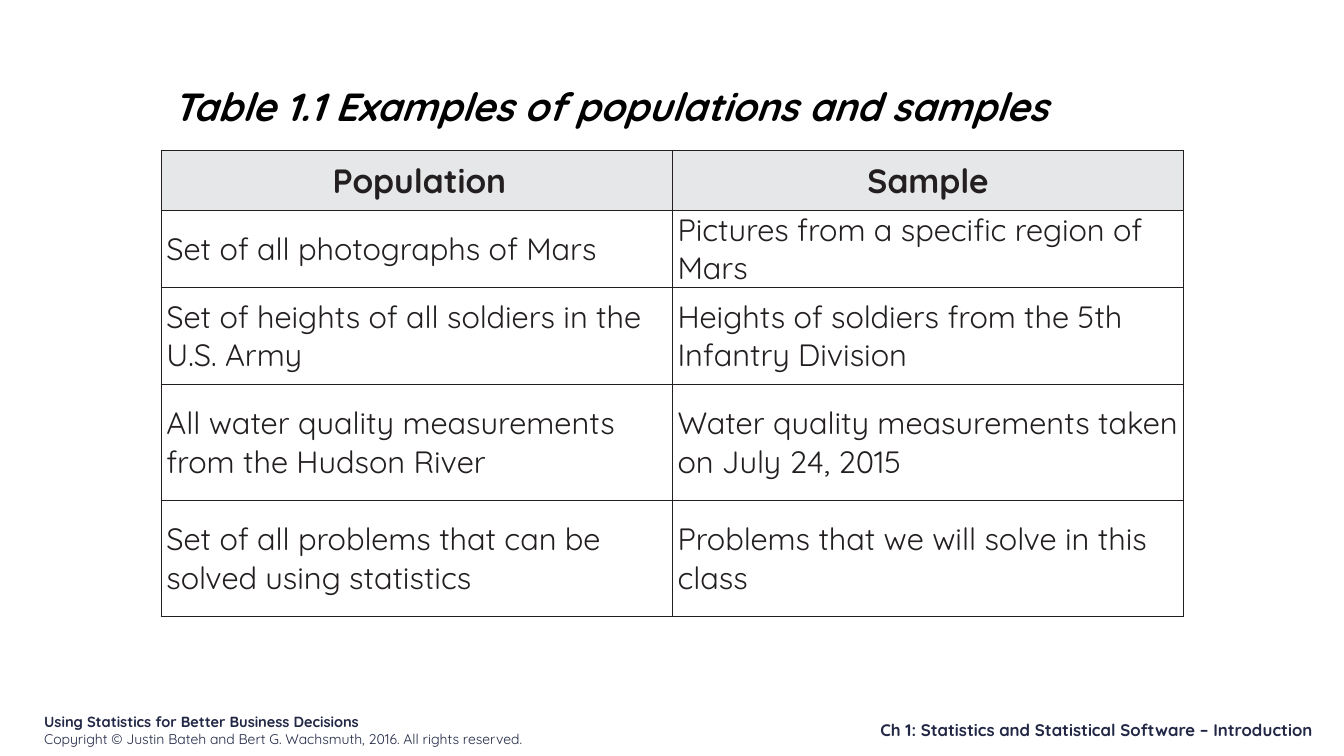
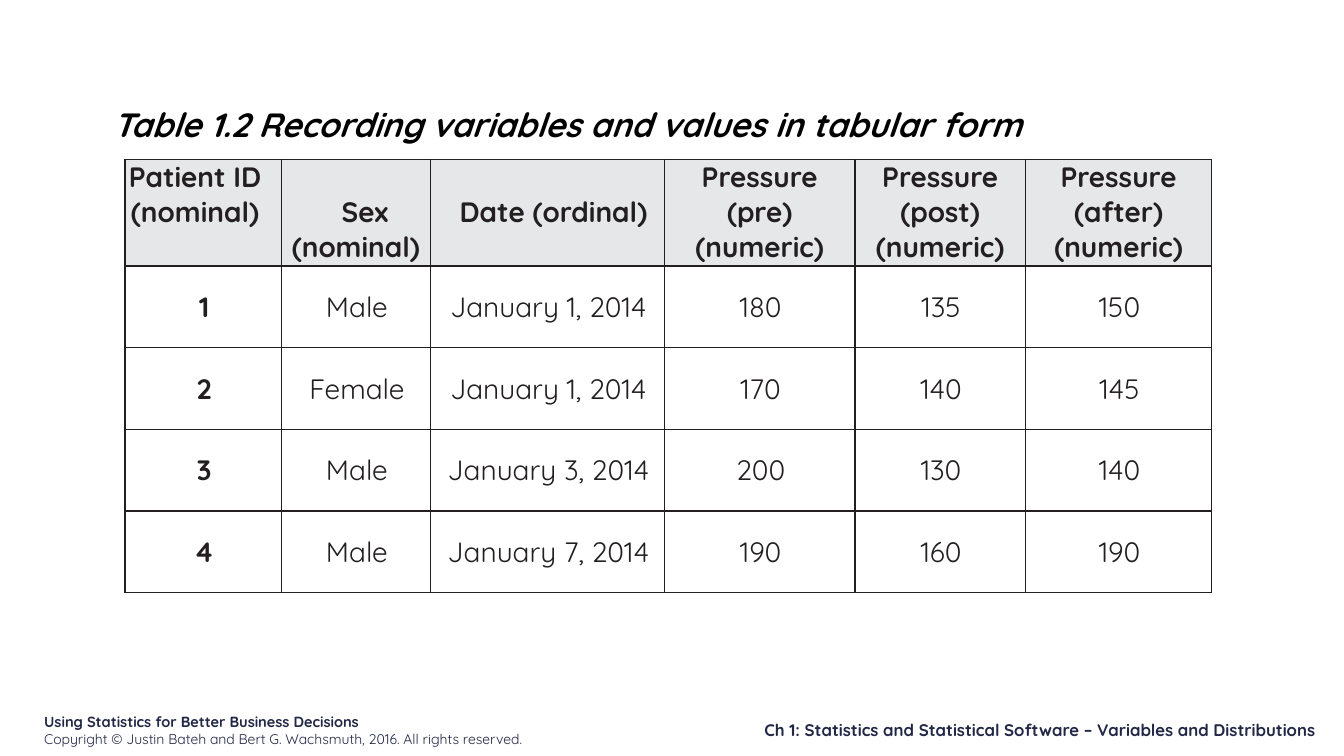
from lxml import etree
from pptx import Presentation
from pptx.dml.color import RGBColor
from pptx.enum.text import MSO_ANCHOR, MSO_AUTO_SIZE, PP_ALIGN
from pptx.oxml.ns import qn
from pptx.util import Inches, Pt

LEFT, CENTER, RIGHT = PP_ALIGN.LEFT, PP_ALIGN.CENTER, PP_ALIGN.RIGHT
TOP, MIDDLE, BOTTOM = MSO_ANCHOR.TOP, MSO_ANCHOR.MIDDLE, MSO_ANCHOR.BOTTOM
NO_AUTO_SIZE = MSO_AUTO_SIZE.NONE
TITLE_ONLY = 5
FONT = "Quicksand"
COLORS = {"title": "000000", "footer": "212745", "table": "231F20", "header": "E6E7E8"}
SLIDE_WIDTH, SLIDE_HEIGHT = 13.33, 7.5
LINE_HEIGHT = 1.25

BOOK = "Using Statistics for Better Business Decisions"
COPYRIGHT = "Copyright © Justin Bateh and Bert G. Wachsmuth, 2016. All rights reserved."
CHAPTER = "Ch 1: Statistics and Statistical Software – "

HEADER_LINE = 20 * LINE_HEIGHT / 72
PRESSURE = {"left": 0.1, "right": 0.1}

SLIDES = [
    {
        "title": "Table 1.1 Examples of populations and samples",
        "title_box": (1.54, 0.77, 10.26, 0.9),
        "title_size": 28,
        "section": "Introduction",
        "section_left": 6.5,
        "origin": (1.6, 1.49),
        "columns": [5.07] * 2,
        "rows": [0.6, 0.69, 0.96, 1.15, 1.15],
        "header": [("Population", {"left": 0.05}), ("Sample", {})],
        "header_size": 24,
        "header_anchor": MIDDLE,
        "body": [
            ("Set of all photographs of Mars", "Pictures from a specific region of Mars"),
            ("Set of heights of all soldiers in the U.S. Army",
             "Heights of soldiers from the 5th Infantry Division"),
            ("All water quality measurements from the Hudson River",
             "Water quality measurements taken on July 24, 2015"),
            ("Set of all problems that can be solved using statistics",
             "Problems that we will solve in this class"),
        ],
        "body_size": 22,
        "body_align": LEFT,
        "body_left": 0.05,
        "bold_first_column": False,
    },
    {
        "title": "Table 1.2 Recording variables and values in tabular form",
        "title_box": (0.95, 0.98, 9.59, 0.59),
        "title_size": 24,
        "section": "Variables and Distributions",
        "section_left": 6.53,
        "origin": (1.24, 1.58),
        "columns": [1.55, 1.48, 2.32, 1.89, 1.69, 1.85],
        "rows": [1.06] + [0.81] * 4,
        "header": [
            ("Patient ID (nominal)", {"right": 0.16}),
            ("Sex (nominal)", {"top": HEADER_LINE, "indent": 0.18}),
            ("Date (ordinal)", {"top": HEADER_LINE, "indent": 0.12}),
            ("Pressure (pre) (numeric)", PRESSURE),
            ("Pressure (post) (numeric)", PRESSURE),
            ("Pressure (after) (numeric)", PRESSURE),
        ],
        "header_size": 20,
        "header_anchor": TOP,
        "body": [
            ("1", "Male", "January 1, 2014", "180", "135", "150"),
            ("2", "Female", "January 1, 2014", "170", "140", "145"),
            ("3", "Male", "January 3, 2014", "200", "130", "140"),
            ("4", "Male", "January 7, 2014", "190", "160", "190"),
        ],
        "body_size": 20,
        "body_align": CENTER,
        "body_left": 0.02,
        "bold_first_column": True,
    },
]


def write(paragraph, text, size, color, bold=False, italic=False, align=LEFT, indent=0):
    paragraph.alignment = align
    if indent:
        paragraph._p.get_or_add_pPr().set("indent", str(Inches(indent)))
    run = paragraph.add_run()
    run.text = text
    run.font.name = FONT
    run.font.size = Pt(size)
    run.font.bold = bold
    run.font.italic = italic
    run.font.color.rgb = RGBColor.from_string(COLORS[color])


def add_text_box(slide, box, anchor=TOP):
    shape = slide.shapes.add_textbox(*map(Inches, box))
    shape.text_frame.word_wrap = True
    shape.text_frame.vertical_anchor = anchor
    return shape


def add_shared_footer(slide, layout):
    shape = add_text_box(slide, (0.34, 7.02, 5.28, 0.4))
    frame = shape.text_frame
    write(frame.paragraphs[0], BOOK, 10.5, "footer", bold=True)
    copyright_line = frame.add_paragraph()
    copyright_line.space_after = Pt(1)
    write(copyright_line, COPYRIGHT, 10, "footer")
    layout.shapes.element.append(shape.element)


def add_borders(cell):
    properties = cell._tc.get_or_add_tcPr()
    for position, side in enumerate(("lnL", "lnR", "lnT", "lnB")):
        line = etree.Element(qn("a:" + side), w=str(Pt(1)))
        fill = etree.SubElement(line, qn("a:solidFill"))
        etree.SubElement(fill, qn("a:srgbClr"), val=COLORS["table"])
        properties.insert(position, line)


def fill_cell(cell, text, size, anchor=MIDDLE, fill=None, left=0, right=0, top=0, **text_format):
    cell.margin_left, cell.margin_right = Inches(left), Inches(right)
    cell.margin_top, cell.margin_bottom = Inches(top), 0
    cell.vertical_anchor = anchor
    if fill:
        cell.fill.solid()
        cell.fill.fore_color.rgb = RGBColor.from_string(COLORS[fill])
    else:
        cell.fill.background()
    add_borders(cell)
    write(cell.text_frame.paragraphs[0], text, size, "table", **text_format)


def add_data_table(slide, content):
    columns, rows = content["columns"], content["rows"]
    box = (*content["origin"], sum(columns), sum(rows))
    table = slide.shapes.add_table(len(rows), len(columns), *map(Inches, box)).table
    table.horz_banding = False
    for column, width in zip(table.columns, columns):
        column.width = Inches(width)
    for row, height in zip(table.rows, rows):
        row.height = Inches(height)
    for column, (text, cell_format) in enumerate(content["header"]):
        fill_cell(table.cell(0, column), text, content["header_size"], fill="header",
                  anchor=content["header_anchor"], bold=True, align=CENTER, **cell_format)
    for row, values in enumerate(content["body"], 1):
        for column, text in enumerate(values):
            fill_cell(table.cell(row, column), text, content["body_size"],
                      left=content["body_left"], align=content["body_align"],
                      bold=content["bold_first_column"] and column == 0)


def add_title(slide, content):
    title = slide.shapes.title
    title.left, title.top, title.width, title.height = map(Inches, content["title_box"])
    frame = title.text_frame
    frame.auto_size = NO_AUTO_SIZE
    frame.vertical_anchor = TOP
    frame.margin_left = Inches(0.17)
    write(frame.paragraphs[0], content["title"], content["title_size"], "title",
          bold=True, italic=True)


def main():
    presentation = Presentation()
    presentation.slide_width = Inches(SLIDE_WIDTH)
    presentation.slide_height = Inches(SLIDE_HEIGHT)
    layout = presentation.slide_layouts[TITLE_ONLY]
    for number, content in enumerate(SLIDES):
        slide = presentation.slides.add_slide(layout)
        if number == 0:
            add_shared_footer(slide, layout)
        add_title(slide, content)
        add_data_table(slide, content)
        chapter = add_text_box(slide, (content["section_left"], 7.09, 6.62, 0.3), BOTTOM)
        write(chapter.text_frame.paragraphs[0], CHAPTER + content["section"], 12, "footer",
              bold=True, align=RIGHT)
    presentation.save("out.pptx")


if __name__ == "__main__":
    main()
